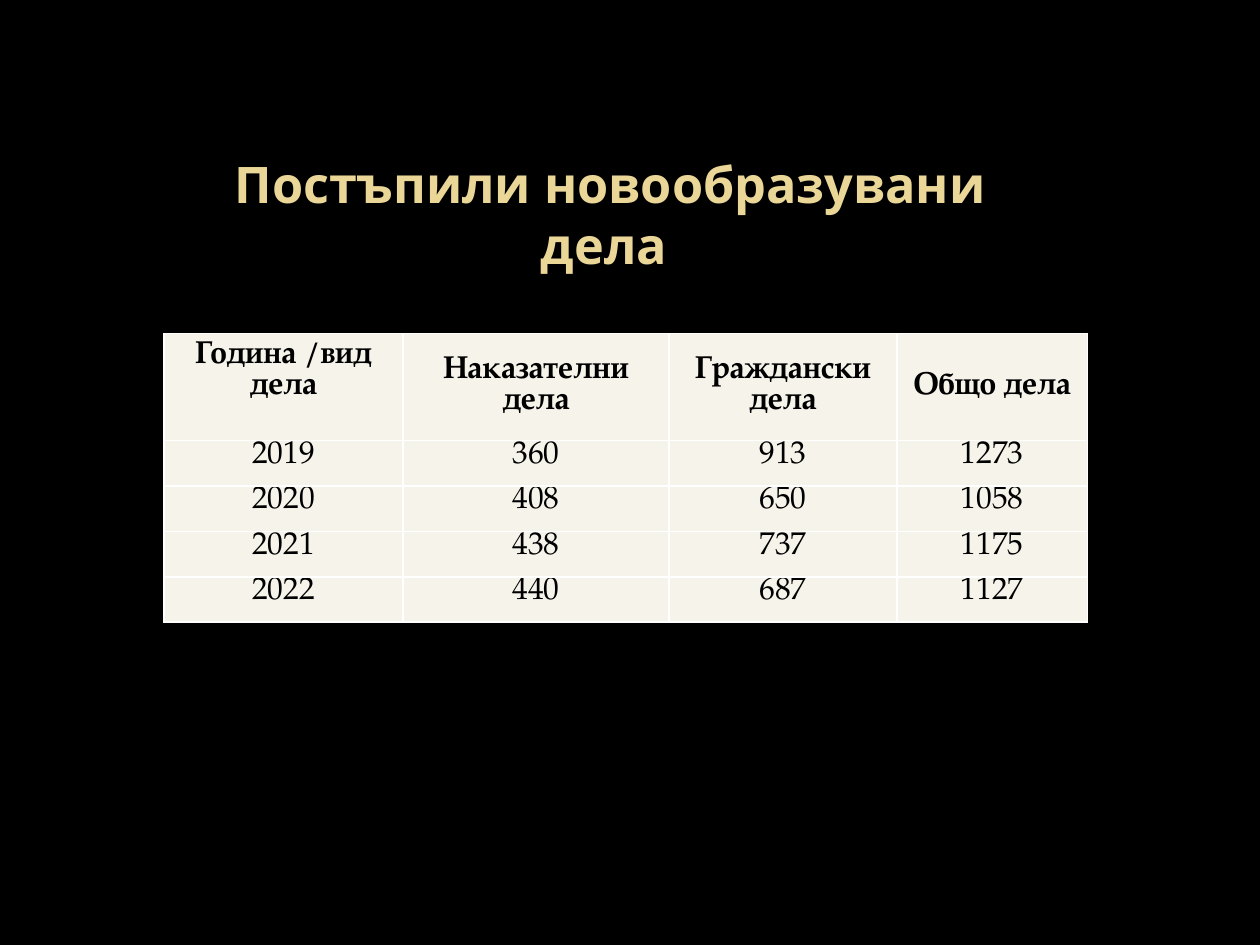
from dataclasses import dataclass

from lxml import etree
from pptx import Presentation
from pptx.dml.color import RGBColor
from pptx.enum.text import MSO_ANCHOR, PP_ALIGN
from pptx.oxml.ns import qn
from pptx.util import Inches, Pt

MID, TOP = MSO_ANCHOR.MIDDLE, MSO_ANCHOR.TOP
CENTER = PP_ALIGN.CENTER

BLACK = RGBColor(0x00, 0x00, 0x00)
WHITE = RGBColor(0xFF, 0xFF, 0xFF)
CREAM = RGBColor(0xF6, 0xF3, 0xEA)
GOLD = RGBColor(0xEA, 0xD6, 0x96)
DARK_GOLD = RGBColor(0xE7, 0xD0, 0x81)

WIDE, HIGH = Inches(10), Inches(7.5)
LEFT = 0.13  # shared left edge, as a share of the slide width
COLS = (0.19, 0.211, 0.181, 0.151)  # shares of the slide width
ROW = 0.048  # one table row, as a share of the slide height

HEAD = ("Година /вид дела", "Наказателни дела", "Граждански дела", "Общо дела")
CASES = ((2019, 360, 913), (2020, 408, 650), (2021, 438, 737), (2022, 440, 687))


@dataclass
class Style:
    font: dict
    anchor: MSO_ANCHOR


TITLE = Style({"name": "Open Sans", "size": Pt(28.8), "bold": True}, MID)
LABEL = Style({"name": "TeX Gyre Pagella", "size": Pt(18), "bold": True}, MID)
VALUE = Style({**LABEL.font, "bold": False}, TOP)


def apply(item, values: dict) -> None:
    for name, value in values.items():
        setattr(item, name, value)


def write(frame, text: str, style: Style):
    """Fill a text frame with one centred paragraph; return its font."""
    para = frame.paragraphs[0]
    para.alignment = CENTER
    run = para.add_run()
    run.text = text
    apply(run.font, style.font)
    return run.font


def edge(cell) -> None:
    """Draw thin white borders; they must come before the cell's fill."""
    props = cell._tc.get_or_add_tcPr()
    for spot, side in enumerate(("lnL", "lnR", "lnT", "lnB")):
        line = etree.Element(qn(f"a:{side}"), w=str(Pt(1)))
        fill = etree.SubElement(line, qn("a:solidFill"))
        etree.SubElement(fill, qn("a:srgbClr"), val=str(WHITE))
        props.insert(spot, line)


def draw_cell(cell, text: str, style: Style) -> None:
    cell.fill.solid()
    cell.fill.fore_color.rgb = CREAM
    edge(cell)
    apply(cell, {"margin_left": Inches(0.05), "margin_right": Inches(0.05),
                 "margin_top": 0, "margin_bottom": 0,
                 "vertical_anchor": style.anchor})
    write(cell.text_frame, text, style).color.rgb = BLACK


def draw_title(slide, text: str) -> None:
    box = slide.shapes.add_textbox(int(LEFT * WIDE), int(0.175 * HIGH),
                                   int(0.709 * WIDE), int(0.103 * HIGH))
    apply(box.text_frame, {"word_wrap": True, "vertical_anchor": TITLE.anchor})
    fill = write(box.text_frame, text, TITLE).fill
    fill.gradient()
    fill.gradient_angle = 280
    for stop, place, color in zip(fill.gradient_stops, (0.73, 1), (GOLD, DARK_GOLD)):
        stop.position = place
        stop.color.rgb = color


def draw_table(slide) -> None:
    # The total is the sum of both kinds of cases
    rows = [HEAD] + [(year, crime, civil, crime + civil)
                     for year, crime, civil in CASES]
    spans = [2] + [1] * len(CASES)
    table = slide.shapes.add_table(
        len(rows), len(COLS), int(LEFT * WIDE), int(0.353 * HIGH),
        int(sum(COLS) * WIDE), int(sum(spans) * ROW * HIGH)).table
    for col, share in zip(table.columns, COLS):
        col.width = int(share * WIDE)
    for r, (row, span) in enumerate(zip(rows, spans)):
        table.rows[r].height = int(span * ROW * HIGH)
        for c, item in enumerate(row):
            draw_cell(table.cell(r, c), str(item), VALUE if r else LABEL)
    # The corner label sits half a line higher than its neighbours
    table.cell(0, 0).margin_bottom = Inches(0.25)


def main() -> None:
    deck = Presentation()
    apply(deck, {"slide_width": WIDE, "slide_height": HIGH})
    slide = deck.slides.add_slide(deck.slide_layouts[6])
    slide.background.fill.solid()
    slide.background.fill.fore_color.rgb = BLACK
    draw_title(slide, "Постъпили новообразувани дела ")
    draw_table(slide)
    deck.save("out.pptx")


if __name__ == "__main__":
    main()
